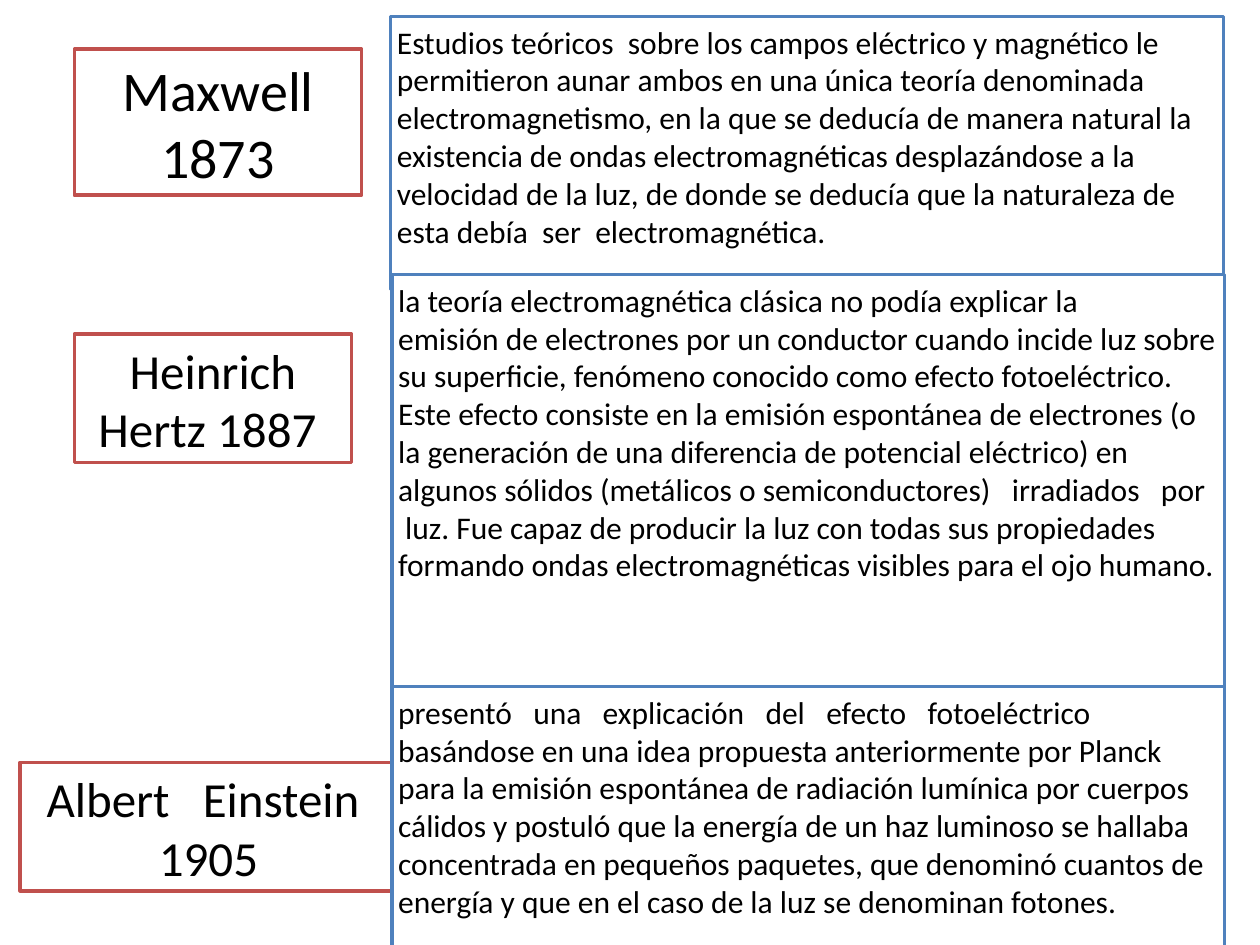
import pptx
import pptx.dml.color
import pptx.enum.shapes
import pptx.enum.text
import pptx.util
from dataclasses import dataclass

Inches = pptx.util.Inches
Align = pptx.enum.text.PP_ALIGN


@dataclass
class Theme:
    font: str = "Calibri"
    text: str = "000000"
    paper: str = "FFFFFF"
    scientist: str = "C0504D"
    account: str = "4F81BD"
    lead_size: int = 32
    name_size: int = 28
    body_size: int = 18
    border: int = 2
    inset: float = 0.05


def rgb(value):
    return pptx.dml.color.RGBColor.from_string(value)


class Timeline:
    """Holds the style and the current slide."""

    def __init__(self, deck, theme):
        self.theme = theme
        self.slide = deck.slides.add_slide(deck.slide_layouts[6])

    def box(self, place, paragraphs, size, outline, align):
        theme = self.theme
        box = self.slide.shapes.add_shape(
            pptx.enum.shapes.MSO_SHAPE.RECTANGLE, *map(Inches, place))
        box.shadow.inherit = False
        box.fill.solid()
        box.fill.fore_color.rgb = rgb(theme.paper)
        box.line.color.rgb = rgb(outline)
        box.line.width = pptx.util.Pt(theme.border)

        frame = box.text_frame
        inset = Inches(theme.inset)
        frame_format = {
            "word_wrap": True,
            "auto_size": pptx.enum.text.MSO_AUTO_SIZE.NONE,
            "vertical_anchor": pptx.enum.text.MSO_ANCHOR.TOP,
            "margin_left": inset, "margin_top": inset,
            "margin_right": inset, "margin_bottom": inset,
        }
        for name, value in frame_format.items():
            setattr(frame, name, value)

        font_format = {"name": theme.font, "size": pptx.util.Pt(size)}
        for index, words in enumerate(paragraphs):
            paragraph = frame.add_paragraph() if index else frame.paragraphs[0]
            paragraph.text = words
            paragraph.alignment = align
            for run in paragraph.runs:
                for name, value in font_format.items():
                    setattr(run.font, name, value)
                run.font.color.rgb = rgb(theme.text)

    def scientist(self, place, paragraphs, size):
        self.box(place, paragraphs, size, self.theme.scientist, Align.CENTER)

    def account(self, place, words):
        self.box(place, [words], self.theme.body_size,
                 self.theme.account, Align.LEFT)


MAXWELL = (
    "Estudios teóricos  sobre los campos eléctrico y magnético le permitieron "
    "aunar ambos en una única teoría denominada electromagnetismo, en la que se "
    "deducía de manera natural la existencia de ondas electromagnéticas "
    "desplazándose a la velocidad de la luz, de donde se deducía que la "
    "naturaleza de esta debía  ser  electromagnética."
)
HERTZ = (
    "la teoría electromagnética clásica no podía explicar la \n"
    "emisión de electrones por un conductor cuando incide luz sobre su "
    "superficie, fenómeno conocido como efecto fotoeléctrico. Este efecto "
    "consiste en la emisión espontánea de electrones (o la generación de una "
    "diferencia de potencial eléctrico) en algunos sólidos (metálicos o "
    "semiconductores)   irradiados   por   luz. Fue capaz de producir la luz con "
    "todas sus propiedades formando ondas electromagnéticas visibles para el "
    "ojo humano."
)
EINSTEIN = (
    "presentó   una   explicación   del   efecto   fotoeléctrico \n"
    "basándose en una idea propuesta anteriormente por Planck para la emisión "
    "espontánea de radiación lumínica por cuerpos cálidos y postuló que la "
    "energía de un haz luminoso se hallaba concentrada en pequeños paquetes, que "
    "denominó cuantos de energía y que en el caso de la luz se denominan fotones."
)


def main():
    deck = pptx.Presentation()
    deck.slide_width, deck.slide_height = Inches(10), Inches(7.5)
    theme = Theme()
    timeline = Timeline(deck, theme)

    # Each row: scientist on the left, account of the work on the right
    rows = [
        ((0.59, 0.39, 2.28, 1.16), ["Maxwell", "1873"], theme.lead_size,
         (3.1, 0.13, 6.61, 2.17), MAXWELL),
        ((0.59, 2.65, 2.2, 1.02), ["Heinrich Hertz 1887 "], theme.name_size,
         (3.11, 2.18, 6.61, 3.34), HERTZ),
        ((0.16, 6.05, 2.99, 1.02), ["Albert   Einstein ", "1905"], theme.name_size,
         (3.11, 5.45, 6.61, 2.17), EINSTEIN),
    ]
    for name_place, name, name_size, account_place, account in rows:
        timeline.scientist(name_place, name, name_size)
        timeline.account(account_place, account)

    deck.save("out.pptx")


if __name__ == "__main__":
    main()
